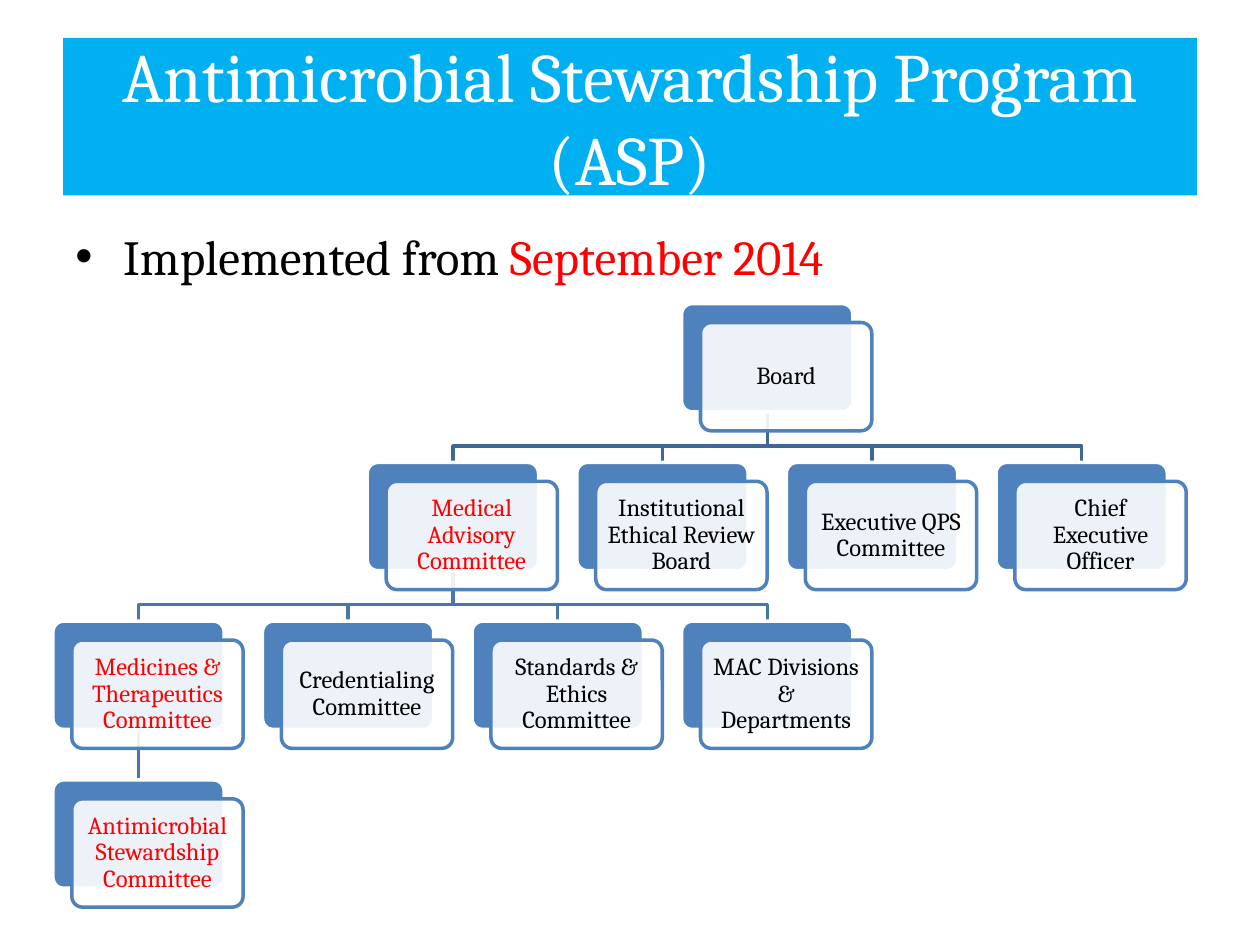
from lxml import etree
from pptx import Presentation
from pptx import util as u
from pptx.dml.color import RGBColor
from pptx.enum import shapes, text
from pptx.oxml.ns import qn

FONT = "Cambria"
BLACK, WHITE, RED = "000000", "FFFFFF", "FF0000"
BLUE, SKY = "4F81BD", "00B0F0"
UPPER_LINE, LOWER_LINE = "3F6797", "4875AC"
LEFT, TOP = 0.42, 2.41
COLUMN_STEP, ROW_STEP = 4.99 / 3, 1.26
CARD_WIDTH, CARD_HEIGHT, CARD_OFFSET = 1.36, 0.86, 0.15
ELBOW = 0.27

CARDS = [
    ("Board", 3, 0, BLACK),
    ("Medical Advisory Committee", 1.5, 1, RED),
    ("Institutional Ethical Review Board", 2.5, 1, BLACK),
    ("Executive QPS Committee", 3.5, 1, BLACK),
    ("Chief Executive Officer", 4.5, 1, BLACK),
    ("Medicines & Therapeutics Committee", 0, 2, RED),
    ("Credentialing Committee", 1, 2, BLACK),
    ("Standards & Ethics Committee", 2, 2, BLACK),
    ("MAC Divisions & Departments", 3, 2, BLACK),
    ("Antimicrobial Stewardship Committee", 0, 3, RED),
]

LINKS = [
    (3, 0, [1.5, 2.5, 3.5, 4.5], UPPER_LINE),
    (1.5, 1, [0, 1, 2, 3], LOWER_LINE),
    (0, 2, [0], LOWER_LINE),
]


def rgb(color):
    return RGBColor.from_string(color)


def add_text(paragraph, content, size=14, color=BLACK, align=None, spacing=None):
    run = paragraph.add_run()
    run.text = content
    run.font.name = FONT
    run.font.size = u.Pt(size)
    run.font.color.rgb = rgb(color)
    if align is not None:
        paragraph.alignment = align
    if spacing is not None:
        paragraph.line_spacing = spacing


def style_line(shape, color):
    shape.line.color.rgb = rgb(color)
    shape.line.width = u.Pt(2)


def add_title(slide, content):
    title = slide.shapes.title
    title.left, title.top = u.Inches(0.5), u.Inches(0.3)
    title.width, title.height = u.Inches(9), u.Inches(1.25)
    title.fill.solid()
    title.fill.fore_color.rgb = rgb(SKY)
    frame = title.text_frame
    frame.auto_size = text.MSO_AUTO_SIZE.NONE
    frame.vertical_anchor = text.MSO_ANCHOR.MIDDLE
    add_text(frame.paragraphs[0], content, size=39.6, color=WHITE,
             align=text.PP_ALIGN.CENTER)


def add_bullet(slide, parts):
    box = slide.shapes.add_textbox(u.Inches(0.5), u.Inches(1.75), u.Inches(9), u.Inches(0.6))
    box.text_frame.word_wrap = True
    paragraph = box.text_frame.paragraphs[0]
    properties = paragraph._p.get_or_add_pPr()
    properties.set("marL", str(u.Inches(0.38)))
    properties.set("indent", str(u.Inches(-0.38)))
    etree.SubElement(properties, qn("a:buFont")).set("typeface", "Arial")
    etree.SubElement(properties, qn("a:buChar")).set("char", "•")
    for content, color in parts:
        add_text(paragraph, content, size=28, color=color)


def card_center(column):
    return LEFT + column * COLUMN_STEP + CARD_WIDTH / 2


def card_top(row):
    return TOP + row * ROW_STEP


def add_straight_link(slide, x, start, end, color):
    line = slide.shapes.add_connector(
        shapes.MSO_CONNECTOR.STRAIGHT,
        u.Inches(x), u.Inches(start), u.Inches(x), u.Inches(end))
    style_line(line, color)
    etree.SubElement(line._element.spPr, qn("a:effectLst"))


def add_elbow_link(slide, x, start, child_x, end, color):
    points = [(x, start + ELBOW), (child_x, start + ELBOW), (child_x, end)]
    builder = slide.shapes.build_freeform(u.Inches(x), u.Inches(start))
    builder.add_line_segments([(u.Inches(a), u.Inches(b)) for a, b in points], close=False)
    link = builder.convert_to_shape()
    link.fill.background()
    link.shadow.inherit = False
    style_line(link, color)


def add_links(slide, column, row, children, color):
    x, start, end = card_center(column), card_top(row) + CARD_HEIGHT, card_top(row + 1)
    for child in children:
        if child == column:
            add_straight_link(slide, x, start, end, color)
        else:
            add_elbow_link(slide, x, start, card_center(child), end, color)


def add_panel(slide, left, top, fill, line):
    panel = slide.shapes.add_shape(
        shapes.MSO_SHAPE.ROUNDED_RECTANGLE,
        u.Inches(left), u.Inches(top), u.Inches(CARD_WIDTH), u.Inches(CARD_HEIGHT))
    panel.adjustments[0] = 0.1
    panel.shadow.inherit = False
    panel.fill.solid()
    panel.fill.fore_color.rgb = rgb(fill)
    style_line(panel, line)
    return panel


def add_card(slide, content, column, row, color):
    left, top = LEFT + column * COLUMN_STEP, card_top(row)
    add_panel(slide, left, top, BLUE, WHITE)
    front = add_panel(slide, left + CARD_OFFSET, top + CARD_OFFSET, WHITE, BLUE)
    fill_color = front._element.spPr.find(qn("a:solidFill"))[0]
    etree.SubElement(fill_color, qn("a:alpha")).set("val", "90000")
    frame = front.text_frame
    frame.word_wrap = True
    frame.vertical_anchor = text.MSO_ANCHOR.MIDDLE
    frame.margin_left = frame.margin_right = u.Inches(0.06)
    frame.margin_top = frame.margin_bottom = u.Inches(0.06)
    add_text(frame.paragraphs[0], content, color=color,
             align=text.PP_ALIGN.CENTER, spacing=0.9)


def main():
    presentation = Presentation()
    presentation.slide_width = u.Inches(10)
    presentation.slide_height = u.Inches(7.5)
    slide = presentation.slides.add_slide(presentation.slide_layouts[5])
    add_title(slide, "Antimicrobial Stewardship Program (ASP)")
    add_bullet(slide, [("Implemented from ", BLACK), ("September 2014", RED)])
    for link in LINKS:
        add_links(slide, *link)
    for card in CARDS:
        add_card(slide, *card)
    presentation.save("out.pptx")


if __name__ == "__main__":
    main()
